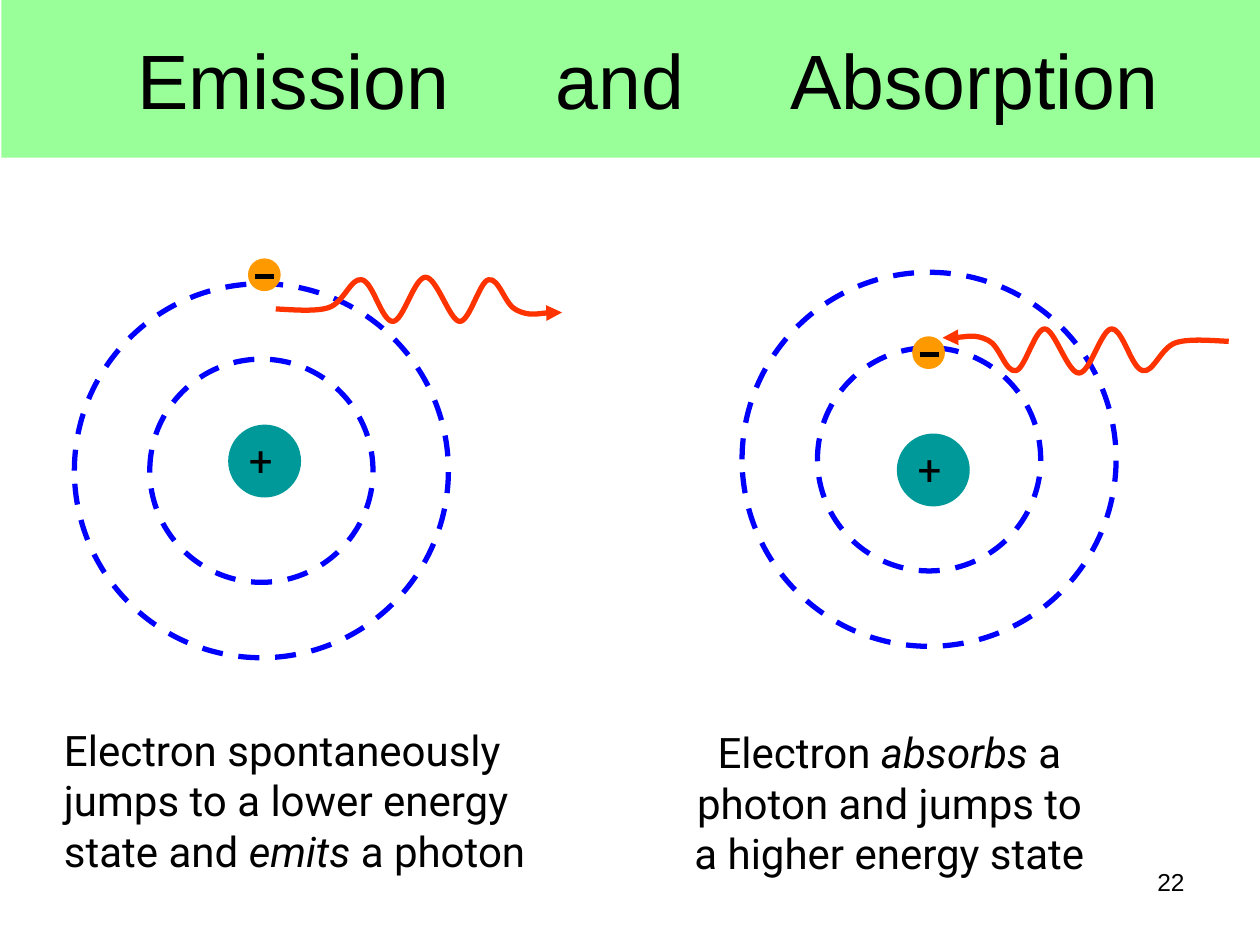
"""Build the slide comparing emission and absorption of a photon by an atom."""
import pptx
import pptx.dml.color
import pptx.enum.dml
import pptx.enum.shapes
import pptx.enum.text
import pptx.oxml
import pptx.oxml.ns
import pptx.util

Cm, Pt = pptx.util.Cm, pptx.util.Pt
ALIGN = pptx.enum.text.PP_ALIGN
OVAL = pptx.enum.shapes.MSO_SHAPE.OVAL
qn = pptx.oxml.ns.qn

TITLE = "Emission\tand\tAbsorption"
TITLE_TABS = (8.43, 13.16)
PAGE = "22"
ATOMS = [
    {"orbit": (1.5, 5.72), "electron": (5.0, 5.21), "wave": (5.56, 5.59), "turn": 0,
     "nucleus": (4.6, 8.56), "caption": (1.04, 14.48, 10.03, 3.33), "align": ALIGN.LEFT,
     "text": [["Electron spontaneously"], ["jumps to a lower energy"],
              ["state and ", "emits", " a photon"]]},
    {"orbit": (14.96, 5.49), "electron": (18.39, 6.78), "wave": (19.0, 6.63), "turn": 180,
     "nucleus": (18.08, 8.74), "caption": (13.61, 14.53, 8.64, 3.33), "align": ALIGN.CENTER,
     "text": [["Electron ", "absorbs", " a"], ["photon and jumps to"],
              ["a higher energy state"]]},
]
ITALIC = {"emits", "absorbs"}
ORBITS = (7.54, 4.5)
ELECTRON, NUCLEUS = 0.66, 1.47
WAVE_START = (0, 64)
WAVE_CURVES = [
    ((18, 64), (79, 71), (107, 61)),
    ((137, 51), (152, 0), (173, 5)),
    ((196, 8), (213, 89), (236, 89)),
    ((257, 89), (279, 0), (302, 0)),
    ((325, 0), (351, 89), (371, 89)),
    ((391, 89), (411, 8), (429, 5)),
    ((450, 0), (462, 56), (485, 66)),
    ((511, 79), (559, 69), (577, 71)),
]


def color(target, value):
    target.rgb = pptx.dml.color.RGBColor.from_string(value)


def stroke(sp, value):
    sp.line.width = Pt(3)
    sp.line.fill.solid()
    color(sp.line.fill.fore_color, value)


def add_circle(shapes, x, y, size, fill=None):
    sp = shapes.add_shape(OVAL, Cm(x), Cm(y), Cm(size), Cm(size))
    sp.shadow.inherit = False
    if fill:
        sp.fill.solid()
        color(sp.fill.fore_color, fill)
        sp.line.fill.background()
    else:
        sp.fill.background()
    return sp


def style(r, font, size):
    r.font.name, r.font.size = font, Pt(size)
    color(r.font.color, "000000")


def add_text(shapes, box, lines, align, font="Roboto", size=24, wrap=False):
    tf = shapes.add_textbox(*map(Cm, box)).text_frame
    tf.word_wrap = wrap
    for i, parts in enumerate(lines):
        p = tf.add_paragraph() if i else tf.paragraphs[0]
        p.alignment = align
        for part in parts:
            r = p.add_run()
            r.text = part
            style(r, font, size)
            if part in ITALIC:
                r.font.italic = True


def add_orbits(shapes, x, y):
    group = shapes.add_group_shape().shapes
    for size in ORBITS:
        inset = (ORBITS[0] - size) / 2
        sp = add_circle(group, x + inset, y + inset, size)
        stroke(sp, "0000FF")
        sp.line.dash_style = pptx.enum.dml.MSO_LINE.DASH


def add_electron(shapes, x, y):
    group = shapes.add_group_shape().shapes
    add_circle(group, x, y, ELECTRON, "FF9900")
    minus = group.add_connector(pptx.enum.shapes.MSO_CONNECTOR.STRAIGHT,
                                Cm(x + 0.15), Cm(y + 0.36), Cm(x + 0.53), Cm(y + 0.36))
    stroke(minus, "000000")
    pptx.oxml.ns.qn("a:effectLst")
    minus._element.spPr.append(pptx.oxml.parse_xml(
        f'<a:effectLst {pptx.oxml.ns.nsdecls("a")}/>'))


def add_wave(shapes, x, y, turn):
    builder = shapes.build_freeform(*WAVE_START, scale=Cm(0.01))
    builder.add_line_segments([pt for curve in WAVE_CURVES for pt in curve], close=False)
    sp = builder.convert_to_shape(Cm(x), Cm(y))
    sp.shadow.inherit = False
    sp.fill.background()
    stroke(sp, "FF3300")
    sp.rotation = turn
    segments = list(sp._element.iter(qn("a:lnTo")))
    for i in range(0, len(segments), 3):
        bezier = segments[i].getparent().makeelement(qn("a:cubicBezTo"))
        segments[i].addprevious(bezier)
        for segment in segments[i:i + 3]:
            bezier.append(segment[0])
            segment.getparent().remove(segment)
    tail = sp.line._get_or_add_ln().makeelement(qn("a:tailEnd"), {"type": "triangle"})
    sp.line._get_or_add_ln().append(tail)


def add_title(s):
    sp = s.shapes.title
    sp.left, sp.top, sp.width, sp.height = Cm(0.03), Cm(0), Cm(25.37), Cm(3.18)
    sp.fill.solid()
    color(sp.fill.fore_color, "99FF99")
    tf = sp.text_frame
    tf.text = TITLE
    tf.margin_left = Cm(2.74)
    tf.vertical_anchor = pptx.enum.text.MSO_ANCHOR.MIDDLE
    p = tf.paragraphs[0]
    p.alignment = ALIGN.LEFT
    for r in p.runs:
        style(r, "Arial", 44)
    stops = "".join(f'<a:tab pos="{Cm(pos)}" algn="l"/>' for pos in TITLE_TABS)
    p._p.get_or_add_pPr().append(pptx.oxml.parse_xml(
        f'<a:tabLst {pptx.oxml.ns.nsdecls("a")}>{stops}</a:tabLst>'))


def main():
    prs = pptx.Presentation()
    prs.slide_width, prs.slide_height = Cm(25.4), Cm(19.05)
    s = prs.slides.add_slide(prs.slide_layouts[5])
    add_title(s)
    for atom in ATOMS:
        add_orbits(s.shapes, *atom["orbit"])
        add_electron(s.shapes, *atom["electron"])
        add_wave(s.shapes, *atom["wave"], atom["turn"])
        x, y = atom["nucleus"]
        add_circle(s.shapes, x, y, NUCLEUS, "009999")
        add_text(s.shapes, (x + 0.1, y + 0.08, 1.12, 1.27), [["+"]], ALIGN.CENTER)
        add_text(s.shapes, atom["caption"], atom["text"], atom["align"])
    add_text(s.shapes, (18.21, 17.35, 5.92, 1.32), [[PAGE]], ALIGN.RIGHT, "Arial", 14, True)
    prs.save("out.pptx")


if __name__ == "__main__":
    main()
